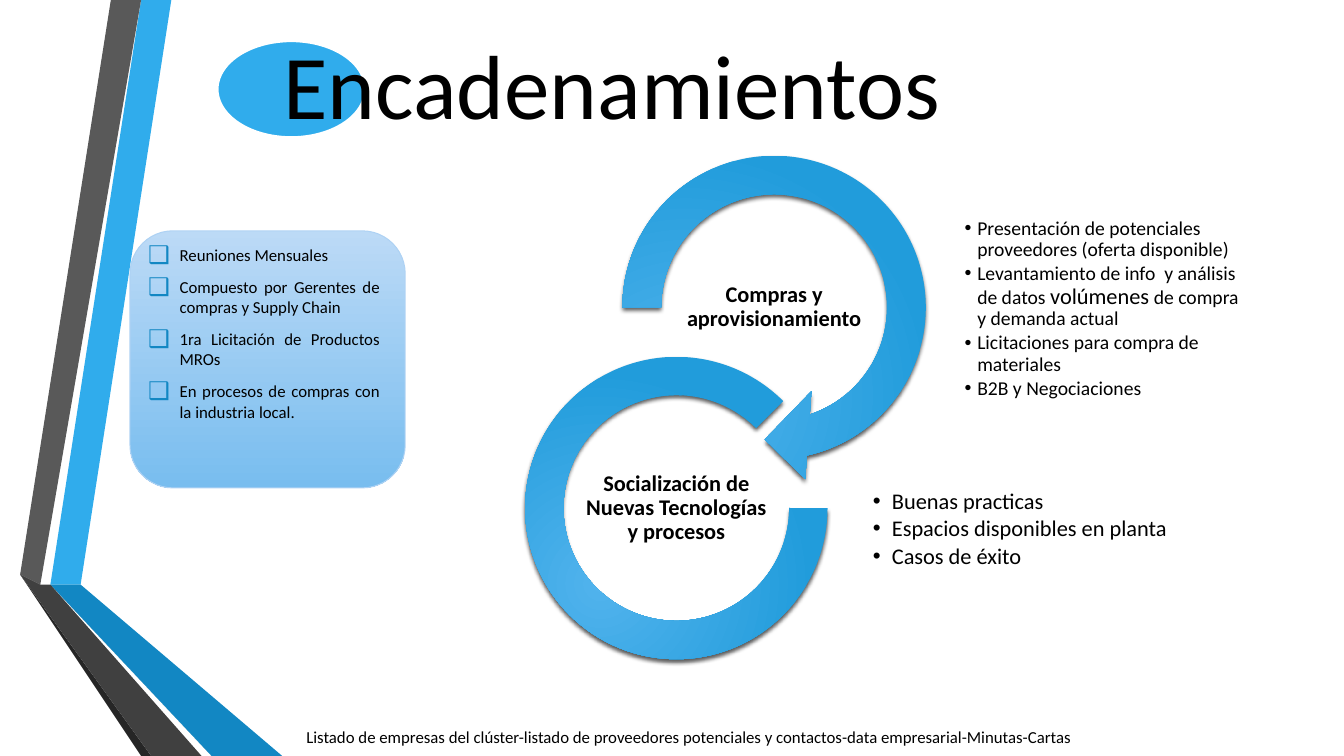
from dataclasses import dataclass
from typing import NamedTuple

from lxml import etree
from pptx import Presentation
from pptx.dml.color import RGBColor
from pptx.enum.shapes import MSO_SHAPE
from pptx.enum.text import MSO_ANCHOR, MSO_AUTO_SIZE, PP_ALIGN
from pptx.oxml.ns import qn
from pptx.util import Emu, Pt

LEFT, CENTER, JUSTIFY = PP_ALIGN.LEFT, PP_ALIGN.CENTER, PP_ALIGN.JUSTIFY
TOP, MIDDLE = MSO_ANCHOR.TOP, MSO_ANCHOR.MIDDLE
NO_FIT = MSO_AUTO_SIZE.NONE
OVAL, ROUNDED = MSO_SHAPE.OVAL, MSO_SHAPE.ROUNDED_RECTANGLE
ARROW, ARC = MSO_SHAPE.CIRCULAR_ARROW, MSO_SHAPE.BLOCK_ARC
CELL = 91440


@dataclass(frozen=True)
class Theme:
    """Font, colours and type sizes of the slide."""
    font: str = "Calibri"
    ink: str = "000000"
    white: str = "FFFFFF"
    blue: str = "30ACEC"
    blue_dark: str = "1287C3"
    blue_deep: str = "0C5A82"
    grey: str = "595959"
    grey_dark: str = "404040"
    grey_deep: str = "262626"
    ring: tuple = ("51B3ED", "219CDB")
    card: tuple = ("BCDAF6", "78BDEF")
    card_line: str = "AED2F4"
    title: int = 65
    large: int = 16
    medium: int = 14
    small: int = 12


class Box(NamedTuple):
    """Area of the slide in grid cells, 75 rows to the height."""
    x: float
    y: float
    w: float
    h: float

    def inner(self, dx, dy, w, h):
        """Return a box placed from this box's corner."""
        return Box(self.x + dx, self.y + dy, w, h)

    def centred(self, w, h):
        """Return a box of the given size in the middle of this one."""
        return self.inner((self.w - w) / 2, (self.h - h) / 2, w, h)

    def emu(self):
        """Return left, top, width and height as lengths."""
        return [Emu(round(v * CELL)) for v in self]


THEME = Theme()


def rgb(value):
    """Turn a hex string into a colour."""
    return RGBColor.from_string(value)


def node(parent, tag, **attrs):
    """Append a drawing element to a parent."""
    return etree.SubElement(parent, qn(tag), {k: str(v) for k, v in attrs.items()})


def add_bullet(pPr, char, color=None, percent=None):
    """Give a paragraph its bullet sign."""
    if color:
        node(node(pPr, "a:buClr"), "a:srgbClr", val=color)
    if percent:
        node(pPr, "a:buSzPct", val=percent * 1000)
    node(pPr, "a:buChar", char=char)


def write(slide, sp, box, paras, size, align=LEFT, anchor=MIDDLE, bold=False,
          insets=(0.1, 0.1), spacing=0.9, before=0, after=0, indent=0, bullet=None):
    """Place a text shape in front and fill it with formatted paragraphs."""
    slide.shapes.element.append(sp.element)
    sp.left, sp.top, sp.width, sp.height = box.emu()
    tf = sp.text_frame
    tf.word_wrap, tf.auto_size, tf.vertical_anchor = True, NO_FIT, anchor
    tf.margin_left = tf.margin_right = Emu(round(insets[0] * CELL))
    tf.margin_top = tf.margin_bottom = Emu(round(insets[1] * CELL))
    for i, runs in enumerate(paras):
        p = tf.add_paragraph() if i else tf.paragraphs[0]
        p.alignment, p.line_spacing = align, spacing
        p.space_before, p.space_after = Pt(before), Pt(after)
        if bullet:
            pPr = p._p.get_or_add_pPr()
            pPr.set("marL", str(round(indent * CELL)))
            pPr.set("indent", str(-round(indent * CELL)))
            add_bullet(pPr, *bullet)
        for text, run_size in [(runs, size)] if isinstance(runs, str) else runs:
            r = p.add_run()
            r.text = text
            r.font.name, r.font.size, r.font.bold = THEME.font, Pt(run_size), bold
            r.font.color.rgb = rgb(THEME.ink)


def add_label(slide, box, text, size, **fmt):
    """Add a text box with one paragraph."""
    write(slide, slide.shapes.add_textbox(*box.emu()), box, [text], size, **fmt)


def add_preset(slide, kind, box, colors, line=None, width=1):
    """Add a preset shape with a plain or vertical gradient fill."""
    sp = slide.shapes.add_shape(kind, *box.emu())
    sp.shadow.inherit = False
    if isinstance(colors, str):
        sp.fill.solid()
        sp.fill.fore_color.rgb = rgb(colors)
    else:
        sp.fill.gradient()
        sp.fill.gradient_angle = 270
        for stop, color in zip(sp.fill.gradient_stops, colors):
            stop.color.rgb = rgb(color)
    if line:
        sp.line.color.rgb, sp.line.width = rgb(line), Pt(width)
    else:
        sp.line.fill.background()
    return sp


def draw_ribbons(slide, box):
    """Draw the folded ribbons down the left edge."""
    ribbons = [
        (THEME.blue, [(5, 57.8), (7.7, 58.3), (17.3, 0), (14.5, 0)]),
        (THEME.grey, [(13.9, 0), (11.1, 0), (1.6, 57.3), (4.4, 57.7)]),
        (THEME.grey_deep, [(1.6, 57.3), (14.5, 75), (15.1, 75)]),
        (THEME.blue_deep, [(5, 57.9), (20.8, 75), (21.4, 75)]),
        (THEME.blue_dark, [(5, 57.8), (21.4, 75), (28.3, 75), (7.7, 58.3)]),
        (THEME.grey_dark, [(20.2, 75), (4.8, 58.3), (4.4, 57.7), (1.6, 57.3), (15.1, 75)]),
    ]
    for color, points in ribbons:
        points = [(box.x + x, box.y + y) for x, y in points]
        outline = slide.shapes.build_freeform(*points[0], scale=CELL)
        outline.add_line_segments(points[1:], close=True)
        sp = outline.convert_to_shape()
        sp.shadow.inherit = False
        sp.fill.solid()
        sp.fill.fore_color.rgb = rgb(color)
        sp.line.fill.background()


def draw_title(slide, box):
    """Place the title over its oval."""
    add_preset(slide, OVAL, box.inner(0, 0.2, 14.6, 9.5), THEME.blue, THEME.white, 1.25)
    write(slide, slide.shapes.title, box.inner(6.5, 0, 77.8, 10), ["Encadenamientos"],
          THEME.title, insets=(0, 0.9))


def draw_ring(slide, box, kind, adjustments, label):
    """Draw a ring with a centred label."""
    sp = add_preset(slide, kind, box, THEME.ring)
    for i, value in enumerate(adjustments):
        sp.adjustments[i] = value
    grad = sp.element.spPr.find(qn("a:gradFill"))
    grad.remove(grad.find(qn("a:lin")))
    glow = node(grad, "a:path", path="circle")
    node(glow, "a:fillToRect", l=50000, t=100000, r=100000, b=50000)
    effects = sp.element.spPr.find(qn("a:effectLst"))
    shadow = node(effects, "a:outerShdw", blurRad=Pt(3), dist=Pt(2), dir=5400000, rotWithShape=0)
    node(node(shadow, "a:srgbClr", val=THEME.ink), "a:alpha", val=64000)
    add_label(slide, box.centred(19.5, 9.8), label, THEME.large, align=CENTER, bold=True)


def draw_cycle(slide, box, lists):
    """Draw the two linked rings, each with its list on the right."""
    draw_ring(slide, box.inner(7.2, 0, 35, 35), ARROW, (0.11, 11.42, 45, 108, 0.125),
              "Compras y aprovisionamiento")
    draw_ring(slide, box.inner(0, 22.4, 30, 30), ARC, (0, 189, 0.127),
              "Socialización de Nuevas Tecnologías y procesos")
    supply = ["Presentación de potenciales proveedores (oferta disponible)",
              [("Levantamiento de info  y análisis de datos ", THEME.medium),
               ("volúmenes", THEME.large), (" de compra y demanda actual", THEME.medium)],
              "Licitaciones para compra de materiales", "B2B y Negociaciones"]
    sharing = ["Buenas practicas", "Espacios disponibles en planta", "Casos de éxito"]
    write(slide, lists[0], box.inner(43.5, 9.1, 27.7, 17.1), supply, THEME.medium,
          after=2, indent=1.25, bullet="•")
    write(slide, lists[1], box.inner(34.4, 31.7, 31.7, 15.7), sharing, THEME.large,
          after=2.4, indent=1.88, bullet="•")


def draw_card(slide, box, body):
    """Draw the card with the checklist."""
    add_preset(slide, ROUNDED, box, THEME.card, THEME.card_line, 0.75)
    tasks = ["Reuniones Mensuales", "Compuesto por Gerentes de compras y Supply Chain",
             "1ra Licitación de Productos MROs",
             "En procesos de compras con la industria local."]
    write(slide, body, box.inner(0.8, 0.9, 25, 23.6), tasks, THEME.small, align=JUSTIFY,
          anchor=TOP, insets=(1, 0.5), spacing=1.0, before=2.4, after=6, indent=3.12,
          bullet=("❑", THEME.blue_dark, 145))


def main():
    """Build the slide and save it."""
    prs = Presentation()
    prs.slide_width, prs.slide_height = Emu(round(133.33 * CELL)), Emu(75 * CELL)
    slide = prs.slides.add_slide(prs.slide_layouts[4])
    _, tasks, supply, spare, sharing = slide.placeholders
    slide.shapes.element.remove(spare.element)
    draw_ribbons(slide, Box(0, 0, 28.3, 75))
    draw_cycle(slide, Box(52.1, 13, 71.2, 52.4), (supply, sharing))
    draw_title(slide, Box(21.6, 3.9, 84.3, 10))
    add_label(slide, Box(29.4, 71.6, 82.2, 3),
              "Listado de empresas del clúster-listado de proveedores potenciales y "
              "contactos-data empresarial-Minutas-Cartas",
              THEME.small, anchor=TOP, insets=(1, 0.5), spacing=1.0)
    draw_card(slide, Box(12.9, 22.9, 27.3, 25.5), tasks)
    prs.save("out.pptx")


if __name__ == "__main__":
    main()
